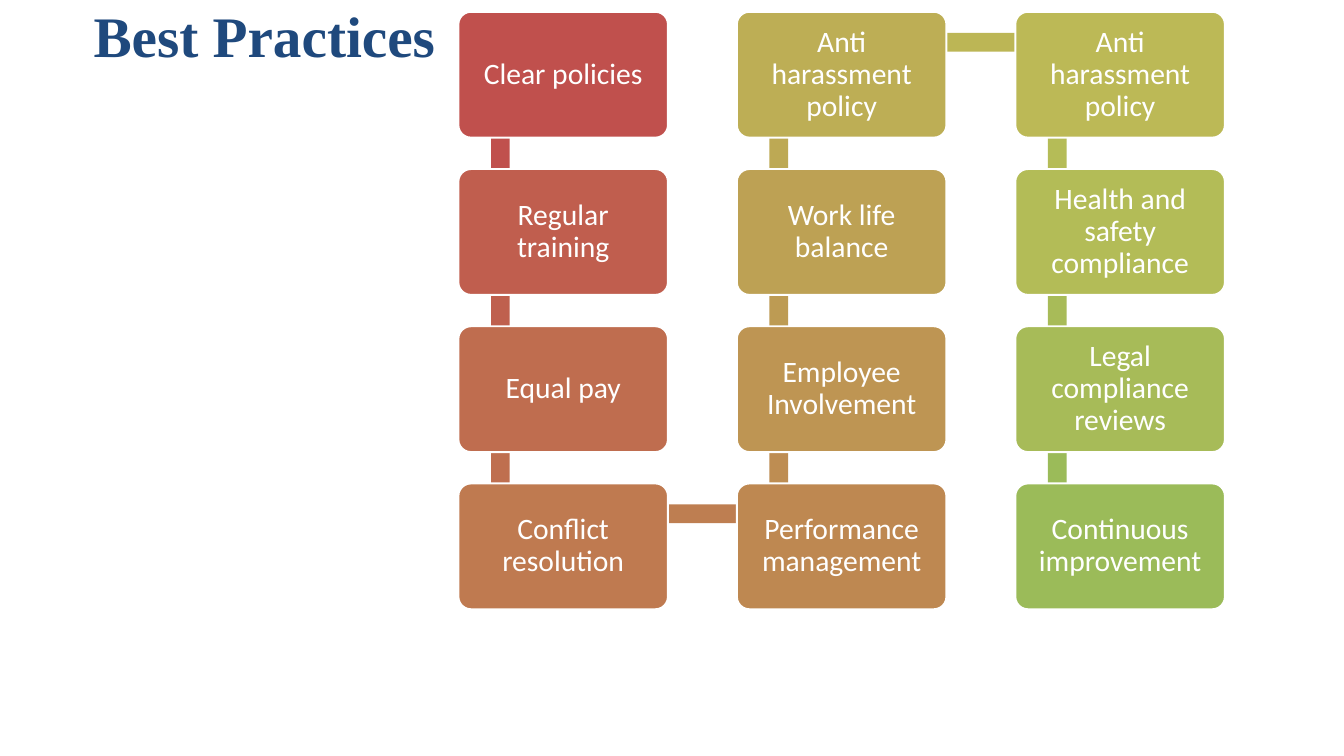
from colorsys import hls_to_rgb, rgb_to_hls

from pptx import Presentation
from pptx.dml.color import RGBColor
from pptx.enum.shapes import MSO_SHAPE as Shape
from pptx.enum.text import MSO_ANCHOR as Anchor, MSO_AUTO_SIZE as Auto, PP_ALIGN as Align
from pptx.util import Pt

NAVY = RGBColor(0x1F, 0x49, 0x7D)
WHITE = RGBColor(0xFF, 0xFF, 0xFF)
RED = RGBColor(0xC0, 0x50, 0x4D)
GREEN = RGBColor(0x9B, 0xBB, 0x59)

STEPS = [
    "Clear policies", "Regular training", "Equal pay", "Conflict resolution",
    "Performance management", "Employee Involvement", "Work life balance",
    "Anti harassment policy", "Anti harassment policy",
    "Health and safety compliance", "Legal compliance reviews",
    "Continuous improvement",
]
ROWS = 4
CARD_W, CARD_H = 219.6, 131.8
GAP_X, GAP_Y = 72.2, 32.9
PIN_X, PIN_Y = 44, 31.8  # where a link meets a card, from its corner
BAR = 19.6


def blend(part):
    """Colour at a share of the way from red to green, by hue."""
    start, end = (rgb_to_hls(*(v / 255 for v in c)) for c in (RED, GREEN))
    mix = [a + (b - a) * part for a, b in zip(start, end)]
    return RGBColor(*(round(v * 255) for v in hls_to_rgb(*mix)))


def add_block(slide, kind, box, color):
    block = slide.shapes.add_shape(kind, *map(Pt, box))
    block.shadow.inherit = False
    block.fill.solid()
    block.fill.fore_color.rgb = color
    block.line.fill.background()
    return block


def add_link(slide, start, end, color):
    """Bar between the pins of two cards, turned to follow the path."""
    (x1, y1), (x2, y2) = start, end
    span = abs(x2 - x1) + abs(y2 - y1)
    left = (x1 + x2 - span) / 2 + PIN_X
    top = (y1 + y2 - BAR) / 2 + PIN_Y
    bar = add_block(slide, Shape.RECTANGLE, (left, top, span, BAR), color)
    if y1 != y2:
        bar.rotation = 90 if y2 > y1 else 270


def add_card(slide, spot, text, color):
    card = add_block(slide, Shape.ROUNDED_RECTANGLE, (*spot, CARD_W, CARD_H), color)
    card.adjustments[0] = 0.1
    card.line.color.rgb = WHITE
    card.line.width = Pt(2)
    frame = card.text_frame
    frame.word_wrap = True
    frame.vertical_anchor = Anchor.MIDDLE
    frame.margin_left = frame.margin_right = Pt(9.3)
    frame.margin_top = frame.margin_bottom = Pt(9.3)
    frame.text = text
    para = frame.paragraphs[0]
    para.alignment = Align.CENTER
    para.line_spacing = 0.9
    para.font.name = "Calibri"
    para.font.size = Pt(31)
    para.font.color.rgb = WHITE


def add_path(slide, left, top):
    """Cards that run down, up and down again, joined by links."""
    spots = []
    for i in range(len(STEPS)):
        col, row = divmod(i, ROWS)
        if col % 2:
            row = ROWS - 1 - row
        spots.append((left + col * (CARD_W + GAP_X), top + row * (CARD_H + GAP_Y)))
    last = len(STEPS) - 1
    for i, (start, end) in enumerate(zip(spots, spots[1:])):
        add_link(slide, start, end, blend(i / (last - 1)))
    for i, (spot, text) in enumerate(zip(spots, STEPS)):
        add_card(slide, spot, text, blend(i / last))


def set_title(slide, text, left, top, width, height):
    title = slide.shapes.title
    title.left, title.top = Pt(left), Pt(top)
    title.width, title.height = Pt(width), Pt(height)
    frame = title.text_frame
    frame.margin_left = frame.margin_right = 0
    frame.margin_top = frame.margin_bottom = 0
    frame.vertical_anchor = Anchor.TOP
    frame.auto_size = Auto.SHAPE_TO_FIT_TEXT
    frame.text = text
    para = frame.paragraphs[0]
    para.alignment = Align.LEFT
    para.font.name = "Times New Roman"
    para.font.size = Pt(60)
    para.font.bold = True
    para.font.color.rgb = NAVY


def main():
    deck = Presentation()
    deck.slide_width, deck.slide_height = Pt(1408.32), Pt(792)
    slide = deck.slides.add_slide(deck.slide_layouts[5])
    set_title(slide, "Best Practices", 98, 0, 738, 72)
    add_path(slide, 480.3, 12.4)
    deck.save("out.pptx")


if __name__ == "__main__":
    main()
